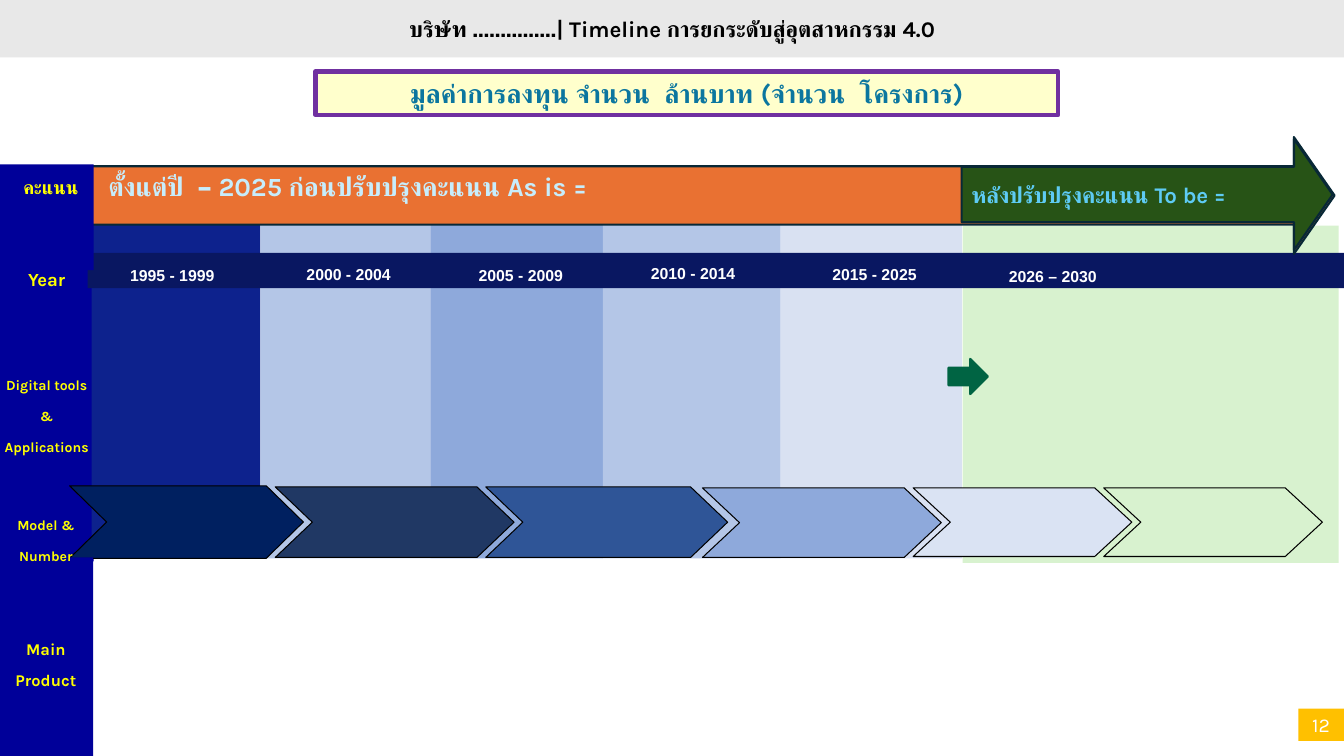
from itertools import pairwise

from pptx import Presentation
from pptx.dml.color import RGBColor
from pptx.enum.shapes import MSO_SHAPE
from pptx.enum.text import MSO_ANCHOR, MSO_AUTO_SIZE, PP_ALIGN
from pptx.util import Pt

COLORS = {
    "black": "000000", "white": "FFFFFF", "yellow": "FFFF00",
    "sidebar": "000099", "year band": "091761", "header": "E8E8E8",
    "cream": "FFFFCC", "purple": "7030A0", "teal": "0B769F",
    "orange": "E97132", "pale cyan": "C7EDFC", "outline": "082836",
    "forest": "275316", "sky": "5ECBF4", "green": "006443", "amber": "FFC000",
    "navy": "0D228D", "light blue": "B4C6E7", "mid blue": "8EA9DB",
    "pale blue": "D9E1F2", "pale green": "D8F2CF",
    "deep navy": "002060", "slate": "203864", "royal": "2F5597", "ice": "DAE3F3",
}

PERIOD_EDGES = [65.5, 186, 307.5, 430.6, 557.6, 687.2]
PERIOD_FILLS = ["navy", "light blue", "mid blue", "light blue", "pale blue"]

# text, centre, top
YEARS = [
    ("1995 - 1999", 123, 184.3),
    ("2000 - 2004", 249, 183.6),
    ("2005 - 2009", 372, 184.3),
    ("2010 - 2014", 495, 182.9),
    ("2015 - 2025", 624.6, 183.6),
    ("2026 – 2030", 752, 185),
]

# left, top, width, height, fill
CHEVRONS = [
    (49.7, 347, 167, 51.8, "deep navy"),
    (196.6, 347.8, 170.6, 50.4, "slate"),
    (347, 347.8, 172.8, 50.4, "royal"),
    (501.8, 348.5, 170.6, 49.7, "mid blue"),
    (652.3, 348.5, 156.2, 49, "ice"),
    (788.4, 348.5, 156.2, 49, "pale green"),
]
CHEVRON_POINT = 26.5

# lines, left, top, height, size, line spacing
ROW_LABELS = [
    (["คะแนน"], 5, 119.5, 22.3, 13.2, 1.4),
    (["Year"], 2, 185, 22.3, 13.2, 1.4),
    (["Digital tools", "&", "Applications"], 2, 259.2, 67, 10, 1.84),
    (["Model & Number"], 1.5, 358.6, 44.6, 10, 1.84),
    (["Main", "Product"], 1.5, 448.6, 44.6, 11.7, 1.58),
]


def rgb(name):
    return RGBColor.from_string(COLORS[name])


def add_block(s, box, fill, kind=MSO_SHAPE.RECTANGLE, line=None, weight=1.5, adjust=()):
    sp = s.shapes.add_shape(kind, *map(Pt, box))
    sp.shadow.inherit = False
    sp.fill.solid()
    sp.fill.fore_color.rgb = rgb(fill)
    if line:
        sp.line.color.rgb = rgb(line)
        sp.line.width = Pt(weight)
    else:
        sp.line.fill.background()
    for i, value in enumerate(adjust):
        sp.adjustments[i] = value
    return sp


def write(sp, lines, size, color, font="Karla", bold=True,
          align=PP_ALIGN.CENTER, spacing=None, insets=(7.2, 3.6, 7.2, 3.6)):
    """Fill a shape with paragraphs; insets run left, top, right, bottom."""
    tf = sp.text_frame
    tf.word_wrap = True
    tf.margin_left, tf.margin_top, tf.margin_right, tf.margin_bottom = map(Pt, insets)
    for i, text in enumerate(lines):
        p = tf.paragraphs[0] if i == 0 else tf.add_paragraph()
        p.text = text
        p.alignment = align
        if spacing:
            p.line_spacing = spacing
        p.font.name = font
        p.font.size = Pt(size)
        p.font.bold = bold
        p.font.color.rgb = rgb(color)
    return tf


def add_label(s, box, lines, size, color, spacing, font="Karla"):
    sp = s.shapes.add_textbox(*map(Pt, box))
    tf = write(sp, lines, size, color, font, spacing=spacing, insets=(0, 0, 0, 0))
    tf.vertical_anchor = MSO_ANCHOR.TOP
    tf.auto_size = MSO_AUTO_SIZE.SHAPE_TO_FIT_TEXT


def add_periods(s):
    add_block(s, (687.6, 161.2, 268.6, 240.8), "pale green")
    add_block(s, (0, 188.6, 67, 212.4), "sidebar")
    for (left, right), fill in zip(pairwise(PERIOD_EDGES), PERIOD_FILLS):
        add_block(s, (left, 157.7, right - left, 241.2), fill)
    add_block(s, (62.6, 180.7, 897.4, 25.2), "year band")
    for text, centre, top in YEARS:
        add_label(s, (centre - 43.5, top, 87, 14.4), [text], 11.3, "white", 1.4, "Arial")


def add_chevrons(s):
    for left, top, width, height, fill in CHEVRONS:
        add_block(s, (left, top, width, height), fill, MSO_SHAPE.CHEVRON,
                  "black", 0.75, [CHEVRON_POINT / height])


def add_score_arrows(s):
    arrow = MSO_SHAPE.RIGHT_ARROW
    sp = add_block(s, (65.5, 97.9, 887.8, 83.5), "orange", arrow, "outline", 1.5, (0.5, 0.348))
    write(sp, ["ตั้งแต่ปี  – 2025 ก่อนปรับปรุงคะแนน As is ="], 18.7, "pale cyan",
          align=PP_ALIGN.LEFT, insets=(12, 3.6, 7.2, 17.6))
    sp = add_block(s, (686.9, 99.4, 265, 79.2), "forest", arrow, "outline", 1.5, (0.5, 0.348))
    write(sp, ["หลังปรับปรุงคะแนน To be ="], 16, "sky", align=PP_ALIGN.LEFT)
    add_block(s, (677.5, 256.3, 28.1, 25.2), "green", arrow, "green")


def add_headings(s):
    sp = add_block(s, (0, 0, 960, 41), "header")
    write(sp, ["บริษัท ……………| Timeline การยกระดับสู่อุตสาหกรรม 4.0"], 16, "black")
    sp = add_block(s, (225.4, 51.1, 530.6, 31), "cream", line="purple", weight=3)
    write(sp, ["มูลค่าการลงทุน จำนวน  ล้านบาท (จำนวน  โครงการ)"], 18.7, "teal")


def add_sidebar(s):
    add_block(s, (0, 117.4, 67, 75.6), "sidebar")
    add_block(s, (0, 398.2, 66.5, 141.8), "sidebar")
    for lines, left, top, height, size, spacing in ROW_LABELS:
        add_label(s, (left, top, 62.6, height), lines, size, "yellow", spacing)


def add_page_number(s):
    sp = add_block(s, (927.4, 506.2, 32.6, 23), "amber")
    write(sp, ["12"], 14, "white", bold=False, insets=(7.2, 7.2, 7.2, 7.2))


def main():
    prs = Presentation()
    prs.slide_width, prs.slide_height = Pt(960), Pt(540)
    s = prs.slides.add_slide(prs.slide_layouts[6])
    add_periods(s)
    add_chevrons(s)
    add_headings(s)
    add_score_arrows(s)
    add_sidebar(s)
    add_page_number(s)
    prs.save("out.pptx")


if __name__ == "__main__":
    main()
